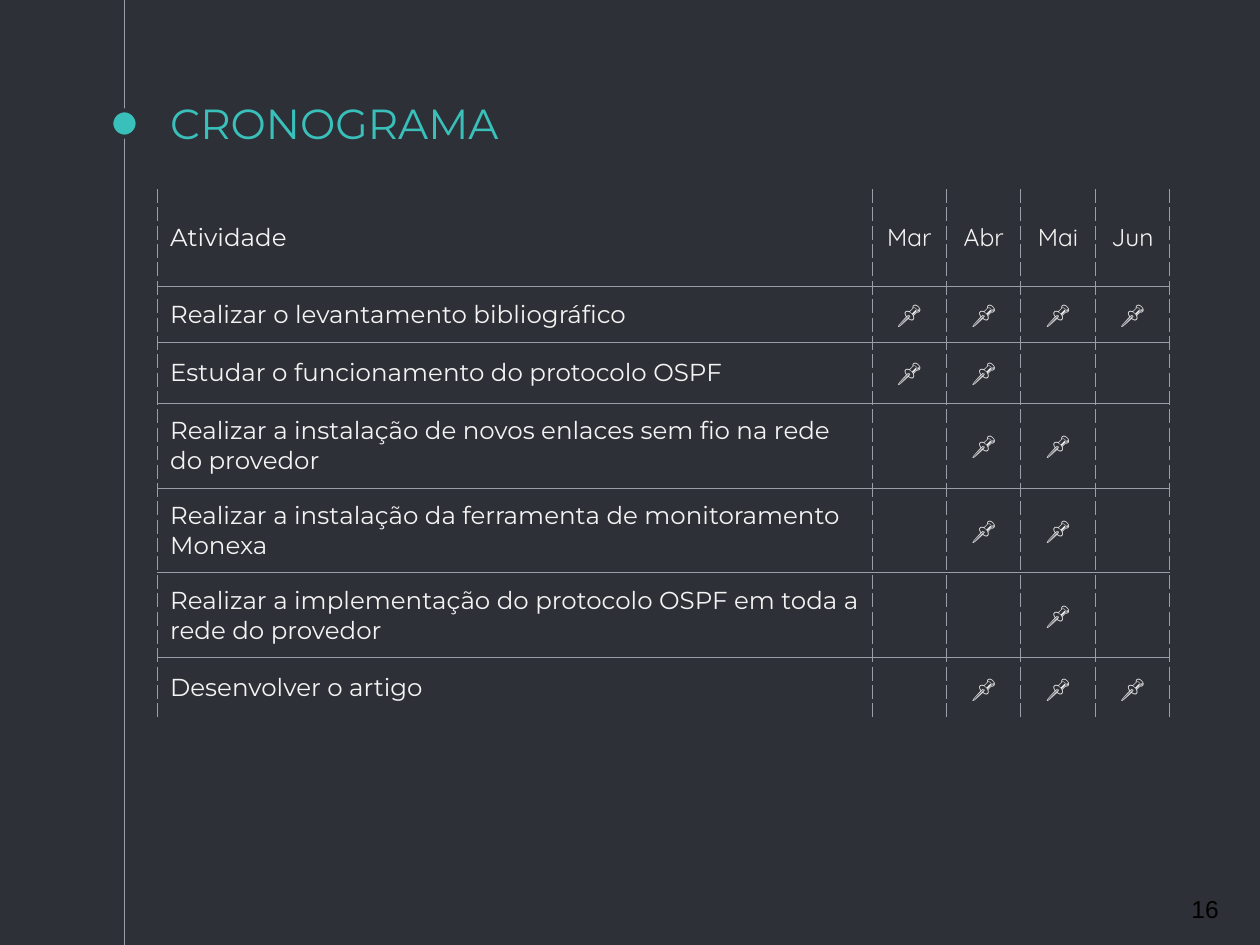
from lxml.etree import SubElement
from pptx import Presentation
from pptx.dml.color import RGBColor
from pptx.enum.shapes import MSO_CONNECTOR as CONNECTOR, MSO_SHAPE as SHAPE
from pptx.enum.text import MSO_ANCHOR as ANCHOR, PP_ALIGN as ALIGN
from pptx.oxml import parse_xml
from pptx.oxml.ns import nsdecls, qn
from pptx.util import Cm, Pt

BACKGROUND, TEAL, GREY, LIGHT = "2E3037", "39C0BA", "999FA9", "F3F3F3"
INSET = Cm(0.25)
PIN = "📌"

MONTHS = ["Mar", "Abr", "Mai", "Jun"]
# Activity, months in which it runs, row height in cm
ACTIVITIES = [
    ("Realizar o levantamento bibliográfico", MONTHS, 1.13),
    ("Estudar o funcionamento do protocolo OSPF", ["Mar", "Abr"], 1.23),
    ("Realizar a instalação de novos enlaces sem fio na rede do provedor",
     ["Abr", "Mai"], 1.71),
    ("Realizar a instalação da ferramenta de monitoramento Monexa",
     ["Abr", "Mai"], 1.71),
    ("Realizar a implementação do protocolo OSPF em toda a rede do provedor",
     ["Mai"], 1.71),
    ("Desenvolver o artigo", ["Abr", "Mai", "Jun"], 1.22),
]
HEADER_HEIGHT = 1.96
ACTIVITY_WIDTH, MONTH_WIDTH = 14.4, 1.5


def rgb(value):
    return RGBColor.from_string(value)


def style_text(paragraph, font, size, color, align=ALIGN.LEFT):
    paragraph.alignment = align
    paragraph.font.name = font
    paragraph.font.size = Pt(size)
    paragraph.font.color.rgb = rgb(color)


def set_insets(holder):
    holder.margin_left = holder.margin_right = INSET
    holder.margin_top = holder.margin_bottom = INSET
    holder.vertical_anchor = ANCHOR.MIDDLE


def add_label(slide, text, left, top, width, height, font, size, color):
    frame = slide.shapes.add_textbox(Cm(left), Cm(top), Cm(width), Cm(height)).text_frame
    frame.word_wrap = True
    set_insets(frame)
    frame.text = text
    style_text(frame.paragraphs[0], font, size, color)
    return frame


def add_timeline(slide, x, marker_y, diameter, length):
    rail = slide.shapes.add_connector(CONNECTOR.STRAIGHT, Cm(x), 0, Cm(x), Cm(length))
    rail.line.color.rgb = rgb(GREY)
    rail.line.width = Pt(0.75)
    SubElement(rail._element.spPr, qn("a:effectLst"))

    marker = slide.shapes.add_shape(
        SHAPE.OVAL, Cm(x - diameter / 2), Cm(marker_y - diameter / 2),
        Cm(diameter), Cm(diameter))
    marker.shadow.inherit = False
    marker.fill.solid()
    marker.fill.fore_color.rgb = rgb(TEAL)
    marker.line.color.rgb = rgb(BACKGROUND)
    marker.line.width = Pt(2.25)


def set_borders(cell, top, bottom):
    """Dashed sides; solid top and bottom only where asked for."""
    edges = [("lnL", "dash"), ("lnR", "dash"),
             ("lnT", "solid" if top else None), ("lnB", "solid" if bottom else None)]
    for position, (tag, dash) in enumerate(edges):
        stroke = (f'<a:solidFill><a:srgbClr val="{GREY}"/></a:solidFill>'
                  f'<a:prstDash val="{dash}"/>') if dash else "<a:noFill/>"
        border = parse_xml(f'<a:{tag} {nsdecls("a")} w="{Pt(0.75)}">{stroke}</a:{tag}>')
        cell._tc.get_or_add_tcPr().insert(position, border)


def add_schedule(slide, left, top):
    rows = [["Atividade", *MONTHS]]
    rows += [[activity, *(PIN if month in active else "" for month in MONTHS)]
             for activity, active, _ in ACTIVITIES]
    heights = [HEADER_HEIGHT, *(height for _, _, height in ACTIVITIES)]
    widths = [ACTIVITY_WIDTH] + [MONTH_WIDTH] * len(MONTHS)

    schedule = slide.shapes.add_table(
        len(rows), len(widths), Cm(left), Cm(top),
        Cm(sum(widths)), Cm(sum(heights))).table
    schedule.first_row = schedule.horz_banding = False
    for column, width in zip(schedule.columns, widths):
        column.width = Cm(width)
    for row, height in zip(schedule.rows, heights):
        row.height = Cm(height)

    last = len(rows) - 1
    for r, texts in enumerate(rows):
        for c, text in enumerate(texts):
            cell = schedule.cell(r, c)
            cell.text = text
            cell.fill.background()
            set_insets(cell)
            set_borders(cell, top=r > 0, bottom=r < last)
            font, align = ("Quicksand", ALIGN.CENTER) if c else ("Montserrat", ALIGN.LEFT)
            style_text(cell.text_frame.paragraphs[0], font, 14, LIGHT, align)


def main():
    presentation = Presentation()
    presentation.slide_width, presentation.slide_height = Cm(25.4), Cm(19.05)
    slide = presentation.slides.add_slide(presentation.slide_layouts[6])
    slide.background.fill.solid()
    slide.background.fill.fore_color.rgb = rgb(BACKGROUND)

    # Timeline rail and marker
    add_timeline(slide, x=2.51, marker_y=2.49, diameter=0.53, length=19.05)

    # Title
    title = add_label(slide, "CRONOGRAMA", 3.18, 1.96, 19.05, 1.27, "Montserrat", 24, TEAL)
    title.vertical_anchor = ANCHOR.BOTTOM

    # Schedule of activities by month
    add_schedule(slide, left=3.18, top=3.81)

    # Slide number
    add_label(slide, "16", 23.77, 17.6, 1.52, 1.45, "Arial", 14, "000000")

    presentation.save("out.pptx")


if __name__ == "__main__":
    main()
